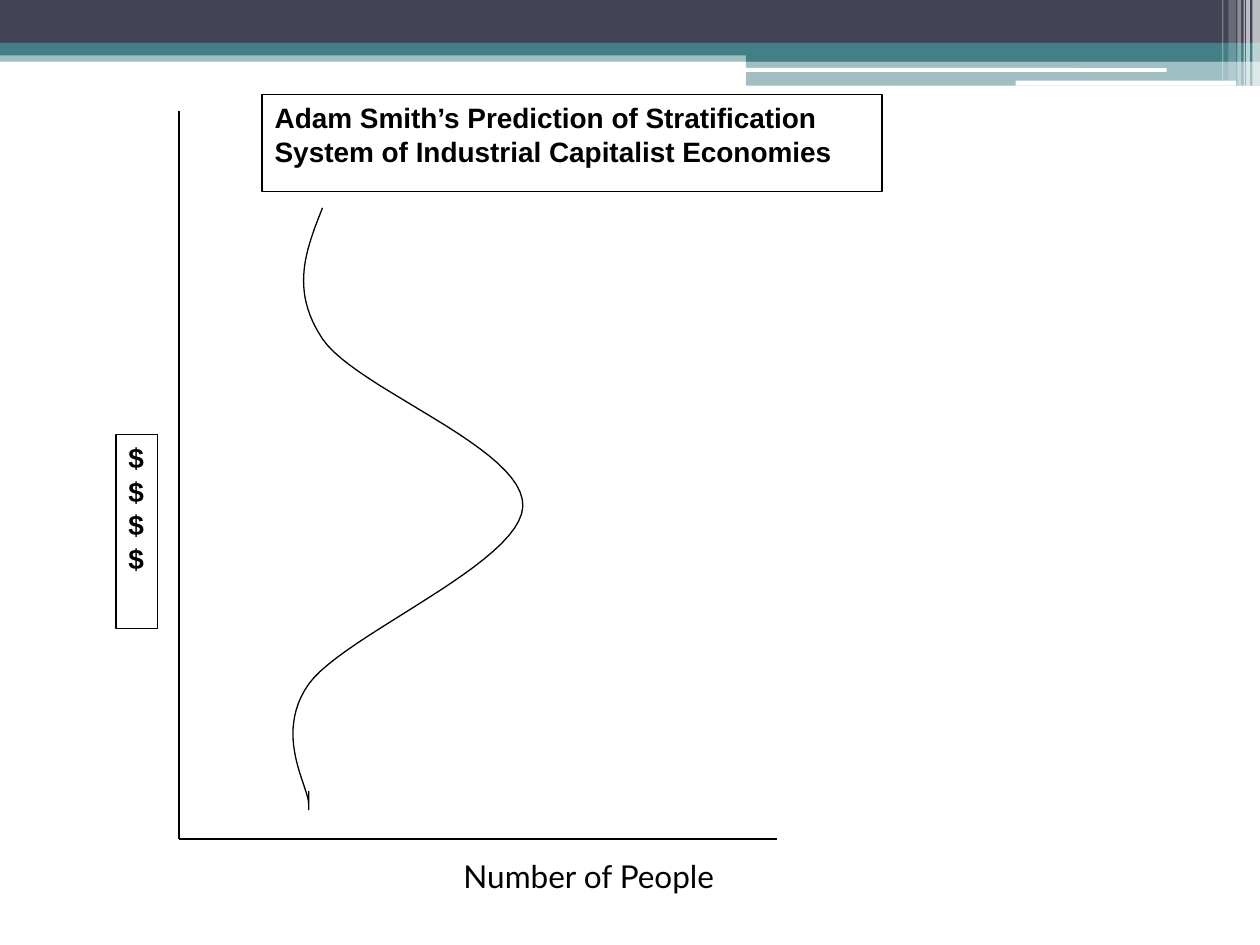
from pptx import Presentation
from pptx.dml.color import RGBColor
from pptx.enum.shapes import MSO_CONNECTOR, MSO_SHAPE
from pptx.enum.text import MSO_ANCHOR, MSO_AUTO_SIZE, PP_ALIGN
from pptx.oxml.ns import qn
from pptx.util import Inches, Pt
from lxml.etree import SubElement

BLACK, WHITE, NAVY, TEAL = "000000", "FFFFFF", "424456", "438086"

BANDS = [
    (0, 0.4, 10, 0.09, TEAL, 50),
    (0, 0, 10, 0.34, NAVY, 100),
    (0, 0.34, 10, 0.1, TEAL, 100),
    (5.92, 0.39, 4.08, 0.1, TEAL, 100),
    (5.92, 0.48, 4.08, 0.2, TEAL, 50),
]
HIGHLIGHTS = [(5.91, 0.54, 3.35, 0.03), (8.06, 0.64, 1.75, 0.04)]
STRIPES = [
    (9.94, 0.06, 0.68, 65),
    (9.89, 0.03, 0.68, 65),
    (9.87, 0.01, 0.68, 60),
    (9.82, 0.03, 0.68, 40),
    (9.75, 0.06, 0.64, 20),
    (9.7, 0.01, 0.64, 30),
]
CURVE_START = (2.56, 1.65)
CURVE_SEGMENTS = [
    [(2.43, 1.98), (2.3, 2.3), (2.56, 2.69)],
    [(2.83, 3.09), (4.17, 3.56), (4.15, 4.02)],
    [(4.13, 4.47), (2.73, 5.04), (2.45, 5.43)],
    [(2.17, 5.83), (2.45, 6.24), (2.45, 6.38)],
    [(2.45, 6.52), (2.45, 6.3), (2.45, 6.28)],
]


def color(value):
    return RGBColor.from_string(value)


def bezier_points(start, segments, steps=24):
    points = [start]
    for first, second, end in segments:
        corners = (points[-1], first, second, end)
        for step in range(1, steps + 1):
            t = step / steps
            weights = ((1 - t) ** 3, 3 * t * (1 - t) ** 2, 3 * t**2 * (1 - t), t**3)
            points.append(tuple(
                sum(weight * corner[axis] for weight, corner in zip(weights, corners))
                for axis in (0, 1)
            ))
    return points


class SlideBuilder:
    line_width = Pt(0.75)

    def __init__(self, slide):
        self.slide = slide

    def outline(self, shape):
        shape.line.color.rgb = color(BLACK)
        shape.line.width = self.line_width

    def block(self, left, top, width, height, fill, opacity=100, kind=MSO_SHAPE.RECTANGLE):
        shape = self.slide.shapes.add_shape(
            kind, Inches(left), Inches(top), Inches(width), Inches(height))
        shape.shadow.inherit = False
        shape.fill.solid()
        shape.fill.fore_color.rgb = color(fill)
        shape.line.fill.background()
        if opacity < 100:
            solid_color = shape._element.spPr.find(qn("a:solidFill"))[0]
            SubElement(solid_color, qn("a:alpha"), val=str(opacity * 1000))
        return shape

    def set_text(self, shape, text, font, size, bold=False):
        frame = shape.text_frame
        frame.text = text
        frame.word_wrap = True
        frame.auto_size = MSO_AUTO_SIZE.NONE
        frame.vertical_anchor = MSO_ANCHOR.TOP
        paragraph = frame.paragraphs[0]
        paragraph.alignment = PP_ALIGN.LEFT
        for run in paragraph.runs:
            run.font.name = font
            run.font.size = Pt(size)
            run.font.bold = bold
            run.font.color.rgb = color(BLACK)

    def boxed_title(self, left, top, width, height, text):
        title = self.slide.shapes.title
        title.left, title.top = Inches(left), Inches(top)
        title.width, title.height = Inches(width), Inches(height)
        title.fill.solid()
        title.fill.fore_color.rgb = color(WHITE)
        self.outline(title)
        self.set_text(title, text, "Arial", 16, bold=True)

    def boxed_label(self, left, top, width, height, text):
        shape = self.block(left, top, width, height, WHITE)
        self.outline(shape)
        self.set_text(shape, text, "Arial", 16, bold=True)

    def caption(self, left, top, width, height, text):
        shape = self.slide.shapes.add_textbox(
            Inches(left), Inches(top), Inches(width), Inches(height))
        self.set_text(shape, text, "Lato", 18)

    def axis(self, start, end):
        connector = self.slide.shapes.add_connector(
            MSO_CONNECTOR.STRAIGHT, *map(Inches, start + end))
        self.outline(connector)
        SubElement(connector._element.spPr, qn("a:effectLst"))

    def curve(self, points):
        vertices = [(Inches(x), Inches(y)) for x, y in points]
        builder = self.slide.shapes.build_freeform(*vertices[0])
        builder.add_line_segments(vertices[1:], close=False)
        shape = builder.convert_to_shape()
        shape.shadow.inherit = False
        shape.fill.background()
        self.outline(shape)


def main():
    presentation = Presentation()
    presentation.slide_width = Inches(10)
    presentation.slide_height = Inches(7.5)
    builder = SlideBuilder(presentation.slides.add_slide(presentation.slide_layouts[5]))

    for band in BANDS:
        builder.block(*band)
    for highlight in HIGHLIGHTS:
        builder.block(*highlight, WHITE, kind=MSO_SHAPE.ROUNDED_RECTANGLE)
    for left, width, height, opacity in STRIPES:
        builder.block(left, 0, width, height, WHITE, opacity)

    origin = (1.42, 6.66)
    builder.axis((1.42, 0.88), origin)
    builder.curve(bezier_points(CURVE_START, CURVE_SEGMENTS))
    builder.axis(origin, (6.17, 6.66))

    builder.boxed_label(0.92, 3.45, 0.33, 1.54, "$$ $ $")
    builder.boxed_title(
        2.08, 0.75, 4.92, 0.77,
        "Adam Smith’s Prediction of Stratification System of Industrial Capitalist Economies")
    builder.caption(3.58, 6.75, 2.75, 0.4, "Number of People")

    presentation.save("out.pptx")


if __name__ == "__main__":
    main()
